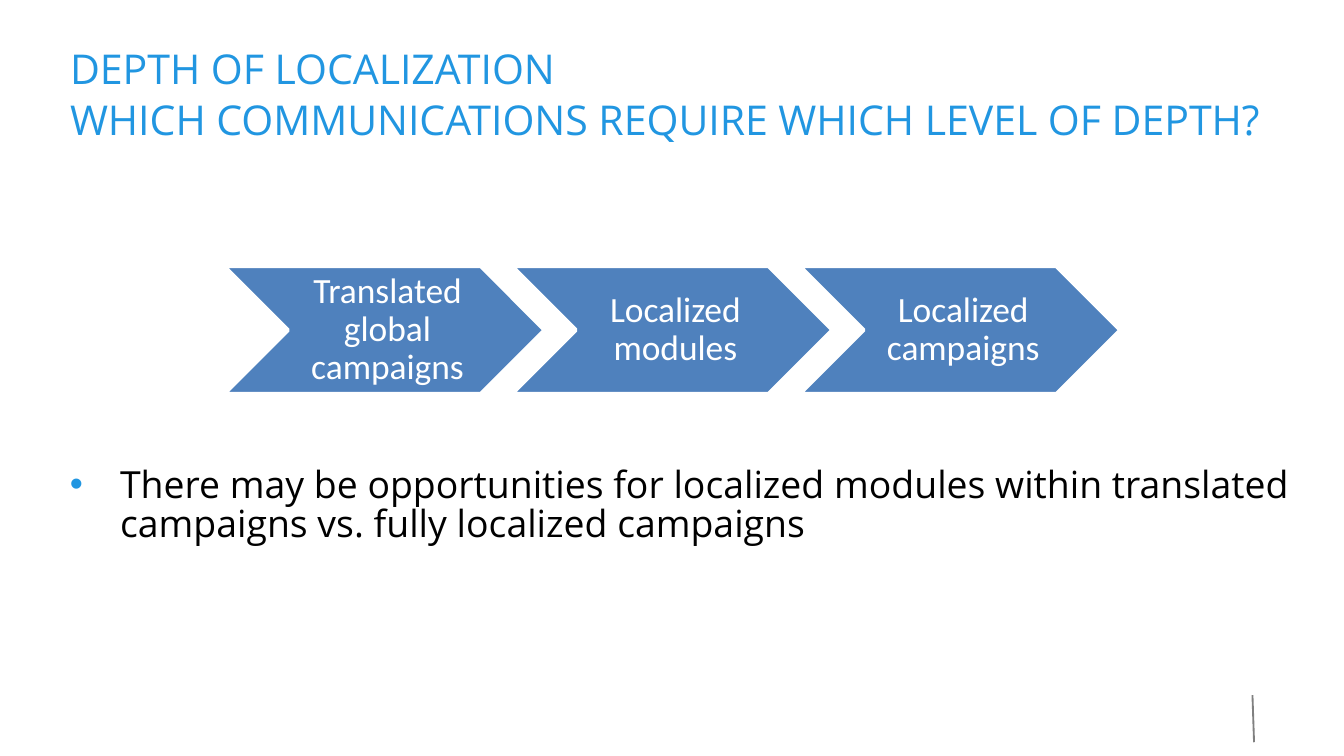
from lxml import etree
from pptx import Presentation
from pptx.dml.color import RGBColor
from pptx.enum import shapes, text
from pptx.oxml.ns import qn
from pptx.util import Cm, Pt

TITLE = ["DEPTH OF LOCALIZATION", "WHICH COMMUNICATIONS REQUIRE WHICH LEVEL OF DEPTH?"]
STEPS = ["Translated global campaigns", "Localized modules", "Localized campaigns"]
BULLET = ("There may be opportunities for localized modules within translated "
          "campaigns vs. fully localized campaigns")
COLORS = {"accent": "2196E1", "chevron": "4F81BD", "white": "FFFFFF",
          "text": "000000", "rule": "808080"}

LEFT, WIDTH = 1.07, 23.75
STEP_LEFT, STEP_TOP, STEP_PITCH = 4.24, 5.03, 5.44
STEP_WIDTH, STEP_HEIGHT = 6.05, 2.41


def color(name):
    return RGBColor.from_string(COLORS[name])


def format_paragraph(paragraph, font_name, size, color_name, alignment):
    paragraph.alignment = alignment
    for run in paragraph.runs:
        run.font.name = font_name
        run.font.size = Pt(size)
        run.font.color.rgb = color(color_name)


def add_bullet(paragraph, indent):
    properties = paragraph._p.get_or_add_pPr()
    properties.set("marL", str(indent))
    properties.set("indent", str(-indent))
    bullet_color = etree.SubElement(properties, qn("a:buClr"))
    etree.SubElement(bullet_color, qn("a:srgbClr"), val=COLORS["accent"])
    etree.SubElement(properties, qn("a:buFont"), typeface="Arial")
    etree.SubElement(properties, qn("a:buChar"), char="•")


def add_title(slide):
    title = slide.shapes.title
    title.left, title.top, title.width, title.height = Cm(LEFT), Cm(0.69), Cm(WIDTH), Cm(2.67)
    frame = title.text_frame
    frame.text = "\n".join(TITLE)
    frame.word_wrap = True
    frame.auto_size = text.MSO_AUTO_SIZE.NONE
    frame.vertical_anchor = text.MSO_ANCHOR.TOP
    for paragraph in frame.paragraphs:
        format_paragraph(paragraph, "Open Sans", 22, "accent", text.PP_ALIGN.LEFT)
    frame.paragraphs[1].space_before = Pt(1)


def add_step(slide, index, label):
    chevron = slide.shapes.add_shape(
        shapes.MSO_SHAPE.CHEVRON, Cm(STEP_LEFT + index * STEP_PITCH), Cm(STEP_TOP),
        Cm(STEP_WIDTH), Cm(STEP_HEIGHT))
    chevron.shadow.inherit = False
    chevron.fill.solid()
    chevron.fill.fore_color.rgb = color("chevron")
    chevron.line.color.rgb = color("white")
    chevron.line.width = Pt(2)
    frame = chevron.text_frame
    frame.text = label
    frame.word_wrap = True
    frame.vertical_anchor = text.MSO_ANCHOR.MIDDLE
    frame.margin_left = Cm(0.2)
    frame.margin_top = frame.margin_right = frame.margin_bottom = Cm(0.08)
    paragraph = frame.paragraphs[0]
    paragraph.line_spacing = 0.9
    format_paragraph(paragraph, "Calibri", 19, "white", text.PP_ALIGN.CENTER)


def add_body(slide):
    frame = slide.shapes.add_textbox(Cm(LEFT), Cm(8.69), Cm(WIDTH), Cm(3.32)).text_frame
    frame.word_wrap = True
    frame.text = BULLET
    paragraph = frame.paragraphs[0]
    add_bullet(paragraph, Cm(0.95))
    paragraph.line_spacing = 0.88
    format_paragraph(paragraph, "Open Sans", 20, "text", text.PP_ALIGN.LEFT)


def add_corner_rule(slide):
    rule = slide.shapes.add_connector(
        shapes.MSO_CONNECTOR.STRAIGHT, Cm(23.67), Cm(13.13), Cm(23.7), Cm(14.02))
    rule.line.color.rgb = color("rule")
    rule.line.width = Pt(1)
    etree.SubElement(rule._element.spPr, qn("a:effectLst"))


def main():
    presentation = Presentation()
    presentation.slide_width, presentation.slide_height = Cm(25.4), Cm(14.28)
    slide = presentation.slides.add_slide(presentation.slide_layouts[5])
    add_corner_rule(slide)
    add_title(slide)
    add_body(slide)
    for index, label in enumerate(STEPS):
        add_step(slide, index, label)
    presentation.save("out.pptx")


if __name__ == "__main__":
    main()
